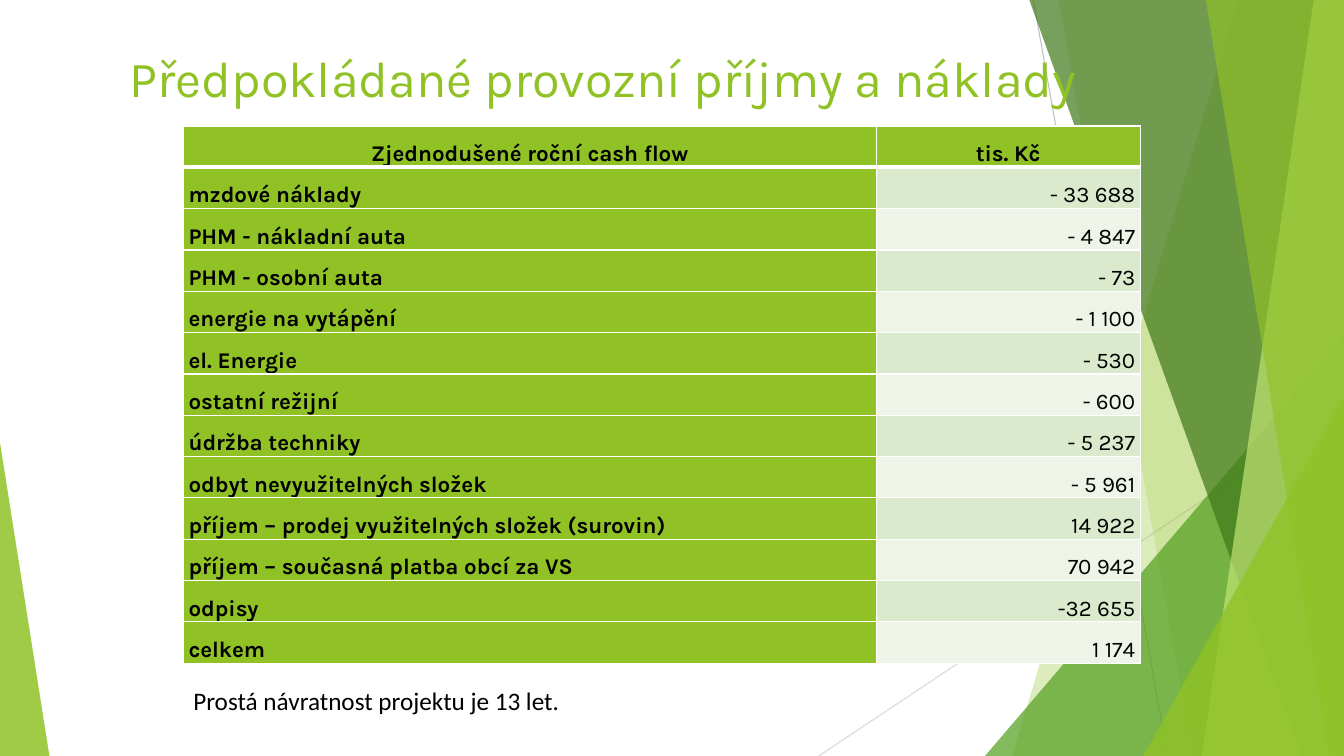
from dataclasses import dataclass

from lxml.etree import SubElement
from pptx import Presentation
from pptx.dml.color import RGBColor
from pptx.enum.shapes import MSO_CONNECTOR, MSO_SHAPE
from pptx.enum.text import MSO_ANCHOR, MSO_AUTO_SIZE, PP_ALIGN
from pptx.oxml.ns import qn
from pptx.util import Inches, Pt


@dataclass(frozen=True)
class Theme:
    lime: str = "90C226"
    green: str = "54A021"
    forest: str = "3F7819"
    pale: str = "C0E474"
    band_dark: str = "DBE9CD"
    band_light: str = "EEF4E8"
    ink: str = "000000"
    white: str = "FFFFFF"
    gray: str = "BFBFBF"
    light_gray: str = "D9D9D9"
    main_font: str = "Karla"
    note_font: str = "Calibri"
    title_size: int = 36
    table_size: int = 16
    note_size: int = 18


THEME = Theme()
WIDTH, HEIGHT = Inches(13.33), Inches(7.5)

CASH_FLOW = [
    ("Zjednodušené roční cash flow", "tis. Kč"),
    ("mzdové náklady", "- 33 688"),
    ("PHM - nákladní auta", "- 4 847"),
    ("PHM - osobní auta", "- 73"),
    ("energie na vytápění", "- 1 100"),
    ("el. Energie", "- 530"),
    ("ostatní režijní", "- 600"),
    ("údržba techniky", "- 5 237"),
    ("odbyt nevyužitelných složek", "- 5 961"),
    ("příjem – prodej využitelných složek (surovin)", "14 922"),
    ("příjem – současná platba obcí za VS", "70 942"),
    ("odpisy", "-32 655"),
    ("celkem", "1 174"),
]


def across(percent):
    return round(WIDTH * percent / 100)


def down(percent):
    return round(HEIGHT * percent / 100)


def area(left, top, width, height):
    return across(left), down(top), across(width), down(height)


def color(code):
    return RGBColor.from_string(code)


def paint(shape, code, opacity):
    shape.shadow.inherit = False
    shape.line.fill.background()
    shape.fill.solid()
    shape.fill.fore_color.rgb = color(code)
    tint = shape.fill._xPr.find(qn("a:solidFill"))[0]
    SubElement(tint, qn("a:alpha"), val=str(opacity * 1000))


def add_ray(group, start, end, code):
    ray = group.shapes.add_connector(
        MSO_CONNECTOR.STRAIGHT, across(start[0]), down(start[1]), across(end[0]), down(end[1]))
    ray.line.color.rgb = color(code)
    ray.line.width = Pt(0.75)
    SubElement(ray.element.spPr, qn("a:effectLst"))


def add_pane(group, top_left, bottom_left, code, opacity):
    builder = group.shapes.build_freeform(across(top_left), 0)
    builder.add_line_segments([(WIDTH, 0), (WIDTH, HEIGHT), (across(bottom_left), HEIGHT)])
    paint(builder.convert_to_shape(), code, opacity)


def add_wedge(group, left, top, width, peak, code, opacity):
    wedge = group.shapes.add_shape(
        MSO_SHAPE.ISOSCELES_TRIANGLE, *area(left, top, width, 100 - top))
    wedge.adjustments[0] = peak
    paint(wedge, code, opacity)


def add_backdrop(page):
    group = page.shapes.add_group_shape()
    add_ray(group, (76.89, 0), (86.87, 100), THEME.gray)
    add_ray(group, (100, 53.73), (60.92, 100), THEME.light_gray)
    add_pane(group, 92.12, 75.32, THEME.lime, 30)
    add_pane(group, 78.77, 88.75, THEME.lime, 20)
    add_wedge(group, 73.29, 44.4, 26.71, 1, THEME.green, 72)
    add_pane(group, 76.59, 96.85, THEME.forest, 70)
    add_pane(group, 97.75, 89.42, THEME.pale, 70)
    add_pane(group, 89.72, 98.87, THEME.lime, 65)
    add_wedge(group, 85.07, 52.4, 14.93, 1, THEME.lime, 80)
    add_wedge(group, 0, 58.53, 3.68, 0, THEME.lime, 85)


def write(para, words, font, size, code, bold=False):
    span = para.add_run()
    span.text = words
    span.font.name = font
    span.font.size = Pt(size)
    span.font.bold = bold
    span.font.color.rgb = color(code)


def set_title(page, words):
    title = page.shapes.title
    title.left, title.top, title.width, title.height = area(5.55, 5.2, 78.69, 10)
    frame = title.text_frame
    frame.word_wrap = True
    frame.auto_size = MSO_AUTO_SIZE.NONE
    frame.vertical_anchor = MSO_ANCHOR.MIDDLE
    para = frame.paragraphs[0]
    para.alignment = PP_ALIGN.CENTER
    write(para, words, THEME.main_font, THEME.title_size, THEME.lime)
    page.shapes.element.append(title.element)


def set_borders(cell, widths):
    properties = cell._tc.get_or_add_tcPr()
    for side, points in widths.items():
        line = SubElement(properties, qn(f"a:ln{side}"), w=str(Pt(points)))
        SubElement(SubElement(line, qn("a:solidFill")), qn("a:srgbClr"), val=THEME.white)


def fill_cell(cell, words, row, column):
    header, label = row == 0, column == 0
    set_borders(cell, {"L": 1, "R": 1, "T": 3 if row == 1 else 1, "B": 3 if header else 1})
    band = THEME.band_dark if row % 2 else THEME.band_light
    cell.fill.solid()
    cell.fill.fore_color.rgb = color(THEME.lime if header or label else band)
    cell.margin_left = cell.margin_right = Inches(0.05)
    cell.margin_top = cell.margin_bottom = 0
    cell.vertical_anchor = MSO_ANCHOR.BOTTOM
    para = cell.text_frame.paragraphs[0]
    para.line_spacing = 1.15
    para.space_after = Pt(10)
    para.alignment = PP_ALIGN.CENTER if header else PP_ALIGN.LEFT if label else PP_ALIGN.RIGHT
    write(para, words, THEME.main_font, THEME.table_size, THEME.ink, header or label)


def add_cash_flow(page):
    frame = page.shapes.add_table(len(CASH_FLOW), 2, *area(13.65, 16.67, 71.19, 71.07))
    table = frame.table
    for column, share in zip(table.columns, (51.54, 19.65)):
        column.width = across(share)
    for row, entry in enumerate(CASH_FLOW):
        for column, words in enumerate(entry):
            fill_cell(table.cell(row, column), words, row, column)


def add_note(page, words):
    box = page.shapes.add_textbox(*area(13.65, 90, 31.43, 5.33))
    box.text_frame.word_wrap = True
    box.text_frame.auto_size = MSO_AUTO_SIZE.SHAPE_TO_FIT_TEXT
    write(box.text_frame.paragraphs[0], words, THEME.note_font, THEME.note_size, THEME.ink)


def main():
    deck = Presentation()
    deck.slide_width, deck.slide_height = WIDTH, HEIGHT
    page = deck.slides.add_slide(deck.slide_layouts[5])
    add_backdrop(page)
    set_title(page, "Předpokládané provozní příjmy a náklady")
    add_cash_flow(page)
    add_note(page, "Prostá návratnost projektu je 13 let.")
    deck.save("out.pptx")


if __name__ == "__main__":
    main()
